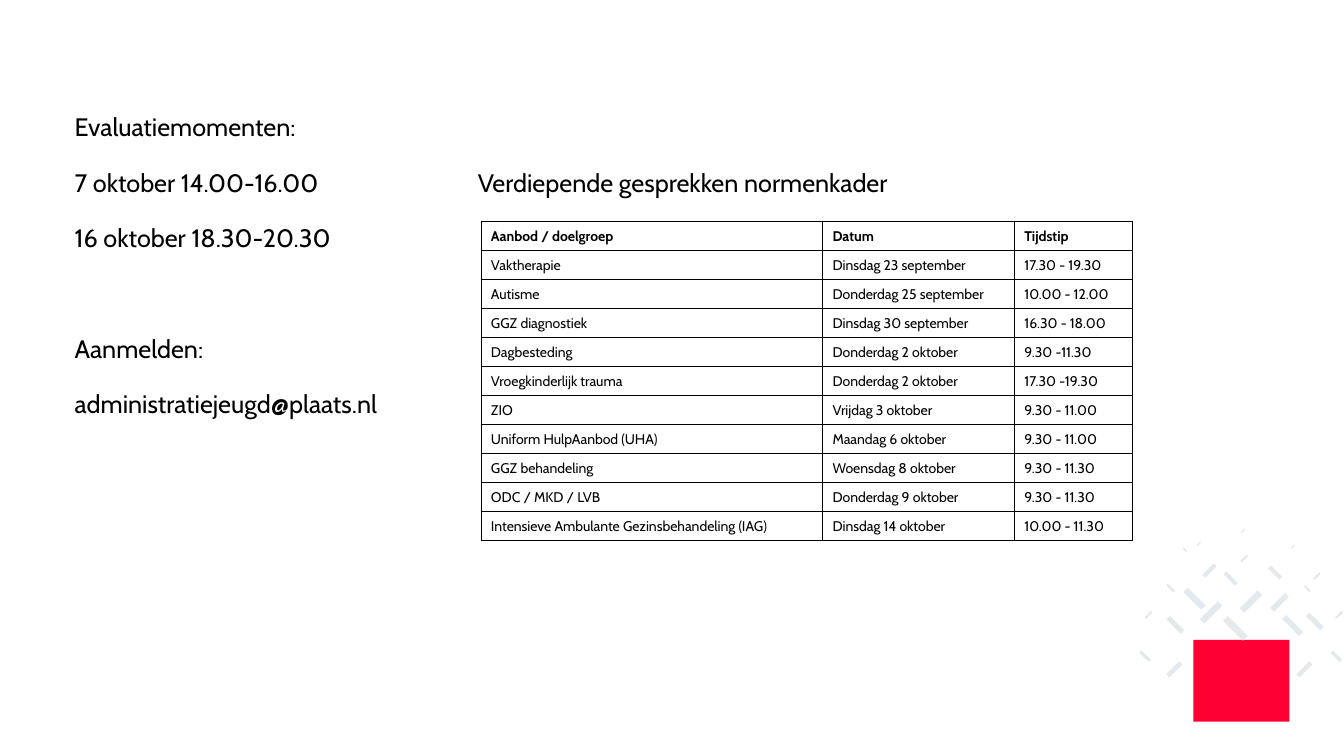
from lxml import etree
from pptx import Presentation
from pptx.dml.color import RGBColor
from pptx.enum import shapes, text
from pptx.oxml import ns
from pptx.util import Pt

COLORS = {"ink": "000000", "paper": "FFFFFF", "brand": "FF0033", "mist": "E4E9EE"}

MOMENTS = [
    ("Evaluatiemomenten:", 0),
    ("7 oktober 14.00-16.00", 20),
    ("16 oktober 18.30-20.30", 20),
    ("Aanmelden:", 59.75),
    ("administratiejeugd@plaats.nl", 20),
]

TALKS = [
    ("Aanbod / doelgroep", "Datum", "Tijdstip"),
    ("Vaktherapie", "Dinsdag 23 september", "17.30 - 19.30"),
    ("Autisme", "Donderdag 25 september", "10.00 - 12.00"),
    ("GGZ diagnostiek", "Dinsdag 30 september", "16.30 - 18.00"),
    ("Dagbesteding", "Donderdag 2 oktober", "9.30 -11.30"),
    ("Vroegkinderlijk trauma", "Donderdag 2 oktober", "17.30 -19.30"),
    ("ZIO", "Vrijdag 3 oktober", "9.30 - 11.00"),
    ("Uniform HulpAanbod (UHA)", "Maandag 6 oktober", "9.30 - 11.00"),
    ("GGZ behandeling", "Woensdag 8 oktober", "9.30 - 11.30"),
    ("ODC / MKD / LVB", "Donderdag 9 oktober", "9.30 - 11.30"),
    ("Intensieve Ambulante Gezinsbehandeling (IAG)", "Dinsdag 14 oktober", "10.00 - 11.30"),
]

RISING = [
    (838.8, 478.1, 13), (931.7, 478.1, 13), (893.5, 429.8, 18),
    (820.4, 439.2, 6.5), (888.8, 398.9, 6.5), (865.1, 437.4, 18),
    (914, 430.2, 15), (956.5, 439.2, 6.5), (864, 407.5, 11.5),
    (940.7, 411.5, 6), (923.4, 390.6, 3.6), (888.1, 379.1, 3.6),
    (856.4, 388.4, 3.6),
]
FALLING = [
    (817.9, 468.7, 9.4), (954.4, 468.7, 9.4), (882.4, 448.9, 20),
    (839.5, 446.4, 14.4), (853.2, 427.7, 18), (939.2, 443.9, 14.4),
    (923.4, 446.8, 17), (836.3, 420.1, 7.2), (879.1, 413.3, 11.5),
    (910.8, 409, 11.5), (933.8, 420.5, 5.8), (846.4, 392.8, 3.6),
]


class Board:
    font = "Cabin"

    def __init__(self, slide):
        self.slide = slide

    def color(self, name):
        return RGBColor.from_string(COLORS[name])

    def run(self, para, words, size, bold=False):
        run = para.add_run()
        run.text = words
        run.font.name = self.font
        run.font.size = Pt(size)
        run.font.bold = bold
        run.font.color.rgb = self.color("ink")

    def box(self, left, top, width, height, lines):
        frame = self.slide.shapes.add_textbox(
            Pt(left), Pt(top), Pt(width), Pt(height)).text_frame
        frame.word_wrap = True
        frame.margin_left = frame.margin_right = 0
        frame.margin_top = frame.margin_bottom = 0
        for row, (words, gap) in enumerate(lines):
            para = frame.add_paragraph() if row else frame.paragraphs[0]
            para.line_spacing = 0.9
            para.space_before = Pt(gap)
            self.run(para, words, 18)

    def block(self, left, top, width, height, fill, turn=0):
        shape = self.slide.shapes.add_shape(
            shapes.MSO_SHAPE.RECTANGLE, Pt(left), Pt(top), Pt(width), Pt(height))
        shape.shadow.inherit = False
        shape.fill.solid()
        shape.fill.fore_color.rgb = self.color(fill)
        shape.line.fill.background()
        shape.rotation = turn

    def bars(self, items, turn):
        for x, y, size in items:
            thick = size / 4
            self.block(x - size / 2, y - thick / 2, size, thick, "mist", turn)

    def border(self, cell):
        props = cell._tc.get_or_add_tcPr()
        for place, side in enumerate(("lnL", "lnR", "lnT", "lnB")):
            line = etree.Element(ns.qn("a:" + side), w=str(Pt(0.65)))
            fill = etree.SubElement(line, ns.qn("a:solidFill"))
            etree.SubElement(fill, ns.qn("a:srgbClr"), val=COLORS["ink"])
            props.insert(place, line)

    def table(self, left, top, widths, height, rows):
        table = self.slide.shapes.add_table(
            len(rows), len(widths), Pt(left), Pt(top),
            Pt(sum(widths)), Pt(height * len(rows))).table
        table.horz_banding = False
        for col, width in zip(table.columns, widths):
            col.width = Pt(width)
        for r, words in enumerate(rows):
            table.rows[r].height = Pt(height)
            for c, word in enumerate(words):
                cell = table.cell(r, c)
                cell.vertical_anchor = text.MSO_ANCHOR.MIDDLE
                cell.fill.solid()
                cell.fill.fore_color.rgb = self.color("paper")
                para = cell.text_frame.paragraphs[0]
                para.line_spacing = Pt(13.5)
                self.run(para, word, 10, r == 0)
                self.border(cell)


def main():
    deck = Presentation()
    deck.slide_width, deck.slide_height = Pt(960), Pt(540)
    board = Board(deck.slides.add_slide(deck.slide_layouts[6]))
    board.block(852.5, 457, 68.5, 58.5, "brand")
    board.bars(RISING, 315)
    board.bars(FALLING, 45)
    board.box(53.3, 82.2, 270, 230, MOMENTS)
    board.box(341.3, 122, 380, 24, [("Verdiepende gesprekken normenkader", 0)])
    board.table(343.5, 157.8, (244, 137, 84.3), 20.75, TALKS)
    deck.save("out.pptx")


if __name__ == "__main__":
    main()
